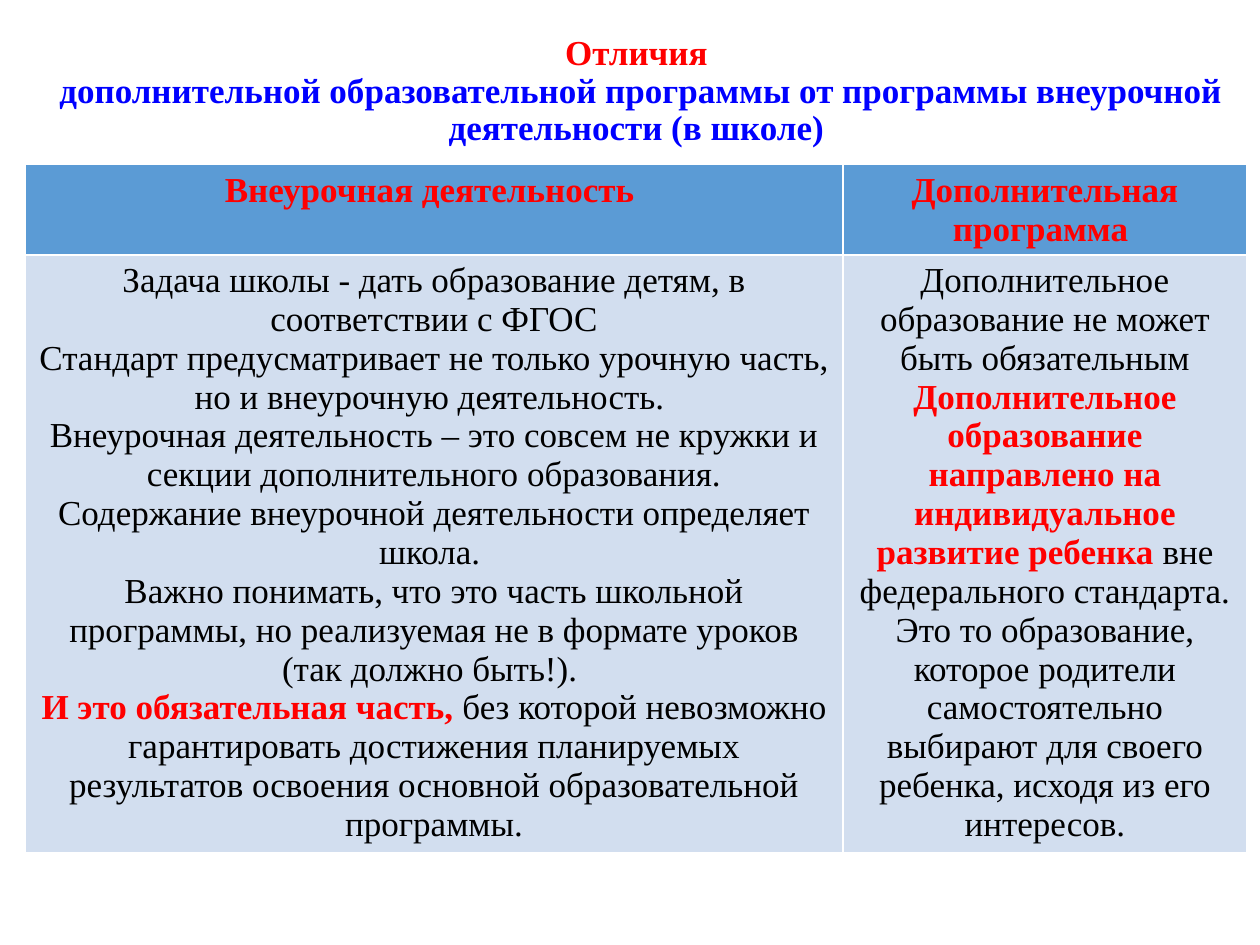
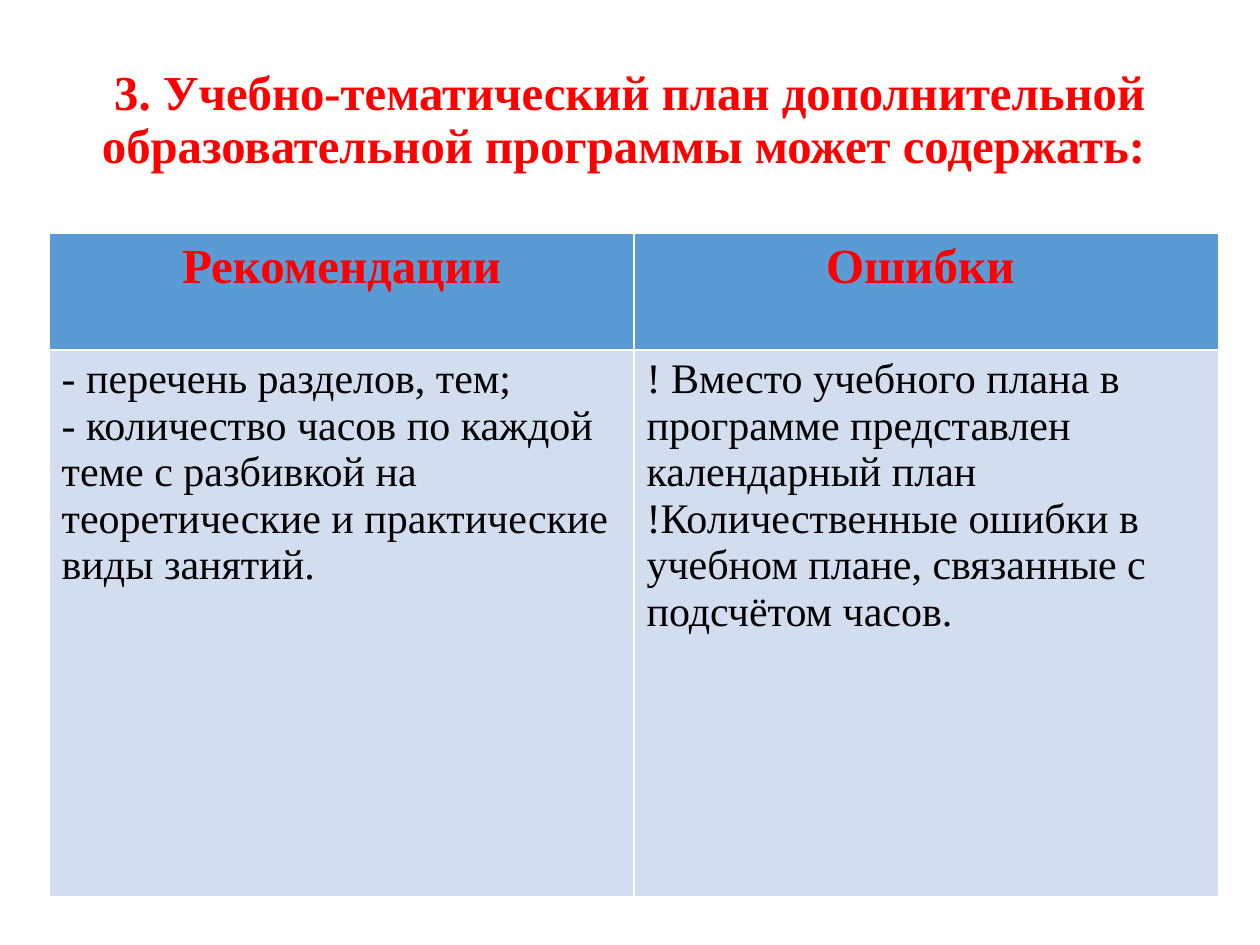
from dataclasses import dataclass
from typing import NamedTuple

import pptx
import pptx.dml.color
import pptx.enum.text
import pptx.util

Cm = pptx.util.Cm
Pt = pptx.util.Pt
RGBColor = pptx.dml.color.RGBColor
PP_ALIGN = pptx.enum.text.PP_ALIGN

RED = RGBColor(0xFF, 0x00, 0x00)
BLUE = RGBColor(0x00, 0x00, 0xFF)
BLACK = RGBColor(0x00, 0x00, 0x00)
HEADER_FILL = RGBColor(0x5B, 0x9B, 0xD5)
BODY_FILL = RGBColor(0xD2, 0xDE, 0xEF)
FONT = "Times New Roman"


class Box(NamedTuple):
    left: float
    top: float
    width: float
    height: float


class Para(NamedTuple):
    """A body paragraph; the lead is shown first, in bold red."""
    text: str
    lead: str = ""


class Column(NamedTuple):
    header: str
    width: float
    body: list[Para]


@dataclass
class Comparison:
    """A title above a two-column table; lengths are in centimetres."""
    title: str
    title_box: Box
    title_size: float
    table_left: float
    table_top: float
    row_heights: tuple[float, float]
    columns: list[Column]
    header_size: float
    body_size: float
    body_align: PP_ALIGN
    title_lead: str = ""


COMPARISONS = [
    Comparison(
        title_lead="Отличия",
        title=" дополнительной образовательной программы от программы "
              "внеурочной деятельности (в школе)",
        title_box=Box(0.51, 0.3, 24.64, 3.1),
        title_size=20,
        table_left=0.51,
        table_top=3.32,
        row_heights=(1.75, 12.04),
        header_size=20,
        body_size=20,
        body_align=PP_ALIGN.CENTER,
        columns=[
            Column("Внеурочная деятельность ", 16.48, [
                Para("Задача школы - дать образование детям, в соответствии с ФГОС"),
                Para("Стандарт предусматривает не только урочную часть, "
                     "но и внеурочную деятельность. "),
                Para("Внеурочная деятельность – это совсем не кружки и секции "
                     "дополнительного образования."),
                Para("Содержание внеурочной деятельности определяет школа. "),
                Para("Важно понимать, что это часть школьной программы, "
                     "но реализуемая не в формате уроков (так должно быть!). "),
                Para("без которой невозможно гарантировать достижения планируемых "
                     "результатов освоения основной образовательной программы.",
                     lead="И это обязательная часть, "),
            ]),
            Column("Дополнительная программа ", 8.15, [
                Para("Дополнительное образование не может быть обязательным"),
                Para("вне федерального стандарта. ",
                     lead="Дополнительное образование направлено на "
                          "индивидуальное развитие ребенка "),
                Para("Это то образование, которое родители самостоятельно выбирают "
                     "для своего ребенка, исходя из его интересов."),
            ]),
        ],
    ),
    Comparison(
        title="3. Учебно-тематический план дополнительной образовательной "
              "программы может содержать: ",
        title_box=Box(1.75, 0.61, 21.89, 3.68),
        title_size=27.9,
        table_left=0.99,
        table_top=4.7,
        row_heights=(2.36, 11.02),
        header_size=28,
        body_size=24,
        body_align=PP_ALIGN.LEFT,
        columns=[
            Column("Рекомендации", 11.79, [
                Para("- перечень разделов, тем;"),
                Para("- количество часов по каждой теме с разбивкой на "
                     "теоретические и практические виды занятий."),
            ]),
            Column("Ошибки ", 11.79, [
                Para("! Вместо учебного плана в программе представлен "
                     "календарный план"),
                Para("!Количественные ошибки в учебном плане, связанные с "
                     "подсчётом часов."),
            ]),
        ],
    ),
]


def format_paragraph(p, size: float, color: RGBColor, bold: bool,
                     align: PP_ALIGN) -> None:
    p.alignment = align
    p.font.name = FONT
    p.font.size = Pt(size)
    p.font.bold = bold
    p.font.color.rgb = color


def add_run(p, text: str, color: RGBColor, bold: bool) -> None:
    """Add a run whose colour and weight may differ from its neighbours."""
    r = p.add_run()
    r.text = text
    r.font.bold = bold
    r.font.color.rgb = color


def add_title(s, comparison: Comparison) -> None:
    sp = s.shapes.title
    sp.left, sp.top, sp.width, sp.height = map(Cm, comparison.title_box)
    tf = sp.text_frame
    tf.word_wrap = True
    tf.auto_size = pptx.enum.text.MSO_AUTO_SIZE.NONE
    tf.vertical_anchor = pptx.enum.text.MSO_ANCHOR.MIDDLE
    p = tf.paragraphs[0]
    p.line_spacing = 0.9
    format_paragraph(p, comparison.title_size, RED, True, PP_ALIGN.CENTER)
    if comparison.title_lead:
        add_run(p, comparison.title_lead, RED, True)
        p.add_line_break()
        add_run(p, comparison.title, BLUE, True)
    else:
        p.add_run().text = comparison.title


def fill_cell(cell, color: RGBColor) -> None:
    cell.fill.solid()
    cell.fill.fore_color.rgb = color


def add_header(cell, text: str, size: float) -> None:
    fill_cell(cell, HEADER_FILL)
    p = cell.text_frame.paragraphs[0]
    format_paragraph(p, size, RED, True, PP_ALIGN.CENTER)
    p.add_run().text = text


def add_body(cell, paras: list[Para], size: float, align: PP_ALIGN) -> None:
    fill_cell(cell, BODY_FILL)
    tf = cell.text_frame
    for i, para in enumerate(paras):
        p = tf.add_paragraph() if i else tf.paragraphs[0]
        format_paragraph(p, size, BLACK, False, align)
        if para.lead:
            add_run(p, para.lead, RED, True)
            add_run(p, para.text, BLACK, False)
        else:
            p.add_run().text = para.text


def add_comparison_table(s, comparison: Comparison) -> None:
    columns = comparison.columns
    width = sum(column.width for column in columns)
    table = s.shapes.add_table(
        2, len(columns), Cm(comparison.table_left), Cm(comparison.table_top),
        Cm(width), Cm(sum(comparison.row_heights))).table
    for row, height in zip(table.rows, comparison.row_heights):
        row.height = Cm(height)
    for i, column in enumerate(columns):
        table.columns[i].width = Cm(column.width)
        add_header(table.cell(0, i), column.header, comparison.header_size)
        add_body(table.cell(1, i), column.body, comparison.body_size,
                 comparison.body_align)


def main() -> None:
    prs = pptx.Presentation()
    prs.slide_width, prs.slide_height = Cm(25.4), Cm(19.05)
    title_only = prs.slide_layouts[5]
    for comparison in COMPARISONS:
        s = prs.slides.add_slide(title_only)
        add_title(s, comparison)
        add_comparison_table(s, comparison)
    prs.save("out.pptx")


if __name__ == "__main__":
    main()
